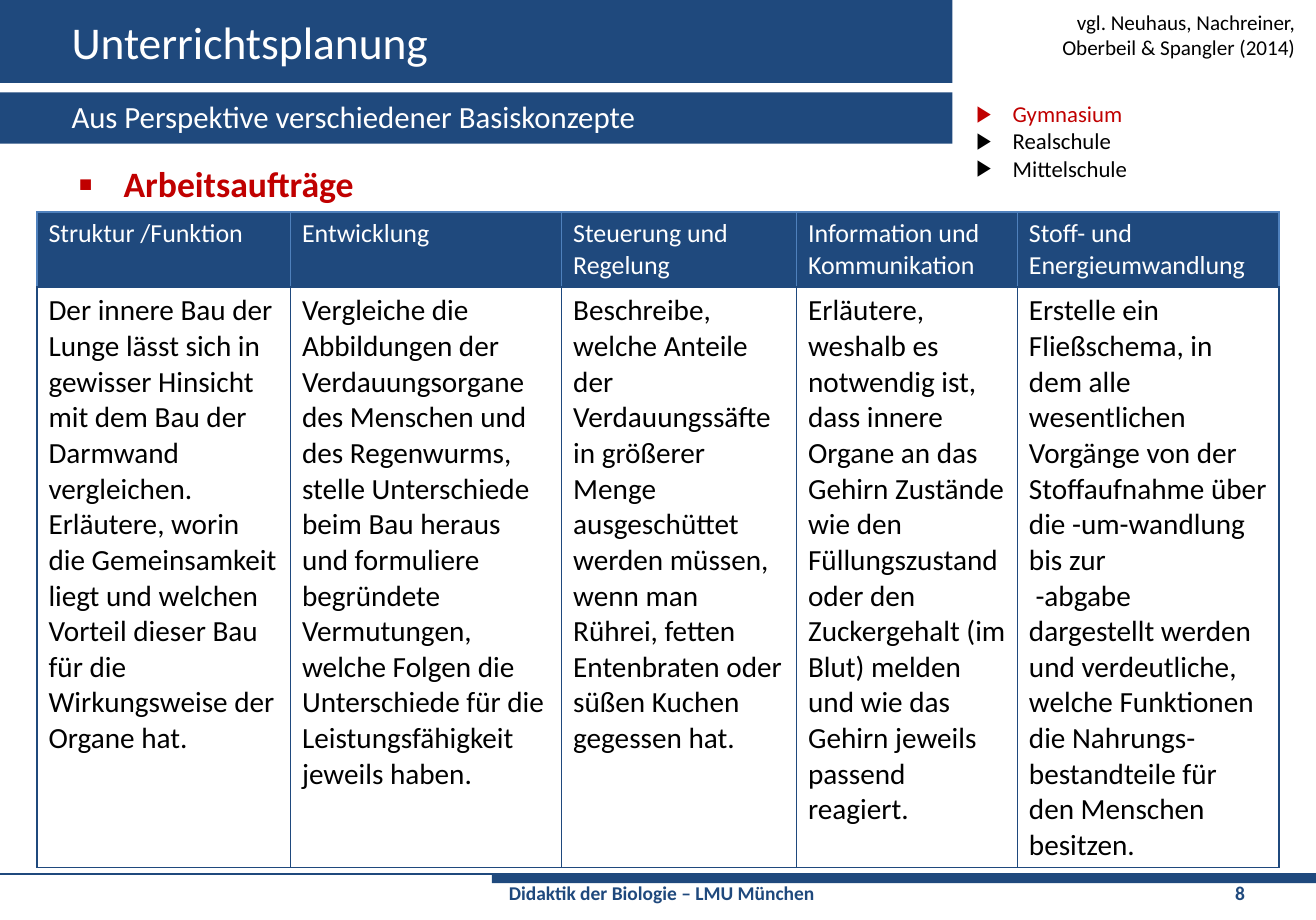
from lxml.etree import SubElement
from pptx import Presentation
from pptx.dml.color import RGBColor
from pptx.enum.shapes import MSO_CONNECTOR as CONN, MSO_SHAPE as SHAPE
from pptx.enum.text import MSO_ANCHOR as ANCHOR, PP_ALIGN as ALIGN
from pptx.oxml import parse_xml
from pptx.oxml.ns import nsdecls, qn
from pptx.util import Pt

NAVY, BLUE, RED, BLACK, WHITE = "1F497D", "4F81BD", "C00000", "000000", "FFFFFF"
WIDTH, HEIGHT = 810.75, 567
BAR_WIDTH, FOOTER_LEFT, FOOTER_TOP = 586.8, 303.12, 538.56


def rgb(color):
    return RGBColor.from_string(color)


def add_run(p, text, size, color, bold=False):
    r = p.add_run()
    r.text = text
    r.font.name = "Calibri"
    r.font.size = Pt(size)
    r.font.bold = bold
    r.font.color.rgb = rgb(color)


prs = Presentation()
prs.slide_width, prs.slide_height = Pt(WIDTH), Pt(HEIGHT)
s = prs.slides.add_slide(prs.slide_layouts[6])

bars = [
    (0, 0, BAR_WIDTH, 51.12),
    (0, 56.88, BAR_WIDTH, 31.68),
    (FOOTER_LEFT, FOOTER_TOP, WIDTH - FOOTER_LEFT, 5.76),
]
for box in bars:
    sp = s.shapes.add_shape(SHAPE.RECTANGLE, *map(Pt, box))
    sp.shadow.inherit = False
    sp.fill.solid()
    sp.fill.fore_color.rgb = rgb(NAVY)
    sp.line.fill.background()

rule = s.shapes.add_connector(CONN.STRAIGHT, 0, Pt(FOOTER_TOP), Pt(WIDTH), Pt(FOOTER_TOP))
rule.line.color.rgb = rgb(NAVY)
rule.line.width = Pt(1)
SubElement(rule._element.spPr, qn("a:effectLst"))

TOP, MIDDLE, LEFT, RIGHT = ANCHOR.TOP, ANCHOR.MIDDLE, ALIGN.LEFT, ALIGN.RIGHT
texts = [
    ((37, 0, 544.32, 51.12), MIDDLE, LEFT, 28, False, None, 0,
     [("Unterrichtsplanung", WHITE)]),
    ((37, 56.5, 544.32, 31.68), TOP, LEFT, 19, False, None, 0,
     [("Aus Perspektive verschiedener Basiskonzepte", WHITE)]),
    ((41.04, 96.48, 730.08, 393.12), TOP, LEFT, 22, True, ("▪", 120), 28.08,
     [("Arbeitsaufträge", RED)]),
    ((473.76, 10.08, 334.8, 22.32), MIDDLE, RIGHT, 13, False, None, 0,
     [("vgl. Neuhaus, Nachreiner,", BLACK), ("Oberbeil & Spangler (2014)", BLACK)]),
    ((594.5, 58, 268.56, 58.32), TOP, LEFT, 14, False, ("▶", 100), 22.32,
     [("Gymnasium", RED), ("Realschule", BLACK), ("Mittelschule", BLACK)]),
]
for box, anchor, align, size, bold, bullet, indent, lines in texts:
    tf = s.shapes.add_textbox(*map(Pt, box)).text_frame
    tf.word_wrap = True
    tf.vertical_anchor = anchor
    if align == RIGHT:
        tf.margin_right = Pt(11)
    for i, (text, color) in enumerate(lines):
        p = tf.add_paragraph() if i else tf.paragraphs[0]
        p.alignment = align
        add_run(p, text, size, color, bold)
        if bullet:
            char, percent = bullet
            pPr = p._p.get_or_add_pPr()
            pPr.set("marL", str(Pt(indent)))
            pPr.set("indent", str(-Pt(indent)))
            SubElement(SubElement(pPr, qn("a:buClr")), qn("a:srgbClr"), val=color)
            SubElement(pPr, qn("a:buSzPct"), val=str(percent * 1000))
            SubElement(pPr, qn("a:buFont"), typeface="Arial")
            SubElement(pPr, qn("a:buChar"), char=char)

columns = [
    (156.24, "Struktur /Funktion",
     ["Der innere Bau der Lunge lässt sich in gewisser Hinsicht mit dem Bau der Darmwand "
      "vergleichen. Erläutere, worin die Gemeinsamkeit liegt und welchen Vorteil dieser Bau "
      "für die Wirkungsweise der Organe hat."]),
    (167.04, "Entwicklung",
     ["Vergleiche die Abbildungen der Verdauungsorgane des Menschen und des Regenwurms, "
      "stelle Unterschiede beim Bau heraus und formuliere begründete Vermutungen, welche "
      "Folgen die Unterschiede für die Leistungsfähigkeit jeweils haben."]),
    (144.72, "Steuerung und Regelung",
     ["Beschreibe, welche Anteile der Verdauungssäfte in größerer Menge ausgeschüttet werden "
      "müssen, wenn man Rührei, fetten Entenbraten oder süßen Kuchen gegessen hat."]),
    (136.08, "Information und Kommunikation",
     ["Erläutere, weshalb es notwendig ist, dass innere Organe an das Gehirn Zustände wie den "
      "Füllungszustand oder den Zuckergehalt (im Blut) melden und wie das Gehirn jeweils "
      "passend reagiert."]),
    (161.28, "Stoff- und Energieumwandlung",
     ["Erstelle ein Fließschema, in dem alle wesentlichen Vorgänge von der Stoffaufnahme über "
      "die -um-wandlung bis zur",
      " -abgabe \vdargestellt werden und verdeutliche, welche Funktionen die "
      "Nahrungs-bestandteile für den Menschen besitzen."]),
]
row_heights = [46.3, 357.8]
table_width = sum(width for width, _, _ in columns)
table = s.shapes.add_table(2, len(columns), Pt(22.7), Pt(130.7),
                           Pt(table_width), Pt(sum(row_heights))).table
table.first_row = table.horz_banding = False
for row, height in zip(table.rows, row_heights):
    row.height = Pt(height)

row_styles = [(16, WHITE, NAVY, BLUE), (18, BLACK, WHITE, NAVY)]
for c, (width, heading, task) in enumerate(columns):
    table.columns[c].width = Pt(width)
    for row, (paragraphs, style) in enumerate(zip([[heading], task], row_styles)):
        size, color, fill, border = style
        cell = table.cell(row, c)
        cell.fill.solid()
        cell.fill.fore_color.rgb = rgb(fill)
        top = NAVY if row else BLUE
        edges = [("lnL", border), ("lnR", border), ("lnT", top), ("lnB", NAVY)]
        for i, (edge, edge_color) in enumerate(edges):
            cell._tc.get_or_add_tcPr().insert(i, parse_xml(
                f'<a:{edge} {nsdecls("a")} w="{Pt(1)}"><a:solidFill>'
                f'<a:srgbClr val="{edge_color}"/></a:solidFill></a:{edge}>'))
        tf = cell.text_frame
        for i, text in enumerate(paragraphs):
            p = tf.add_paragraph() if i else tf.paragraphs[0]
            for j, part in enumerate(text.split("\v")):
                if j:
                    p.add_line_break()
                add_run(p, part, size, color)

footer = s.shapes.add_textbox(Pt(FOOTER_LEFT), Pt(539.28), Pt(WIDTH - FOOTER_LEFT), Pt(22.32))
tf = footer.text_frame
tf.word_wrap = True
tf.margin_left = Pt(10.4)
p = tf.paragraphs[0]
add_run(p, "Didaktik der Biologie – LMU München\t8", 12, NAVY, True)
tabs = SubElement(p._p.get_or_add_pPr(), qn("a:tabLst"))
SubElement(tabs, qn("a:tab"), pos=str(Pt(447.5)), algn="l")

prs.save("out.pptx")
